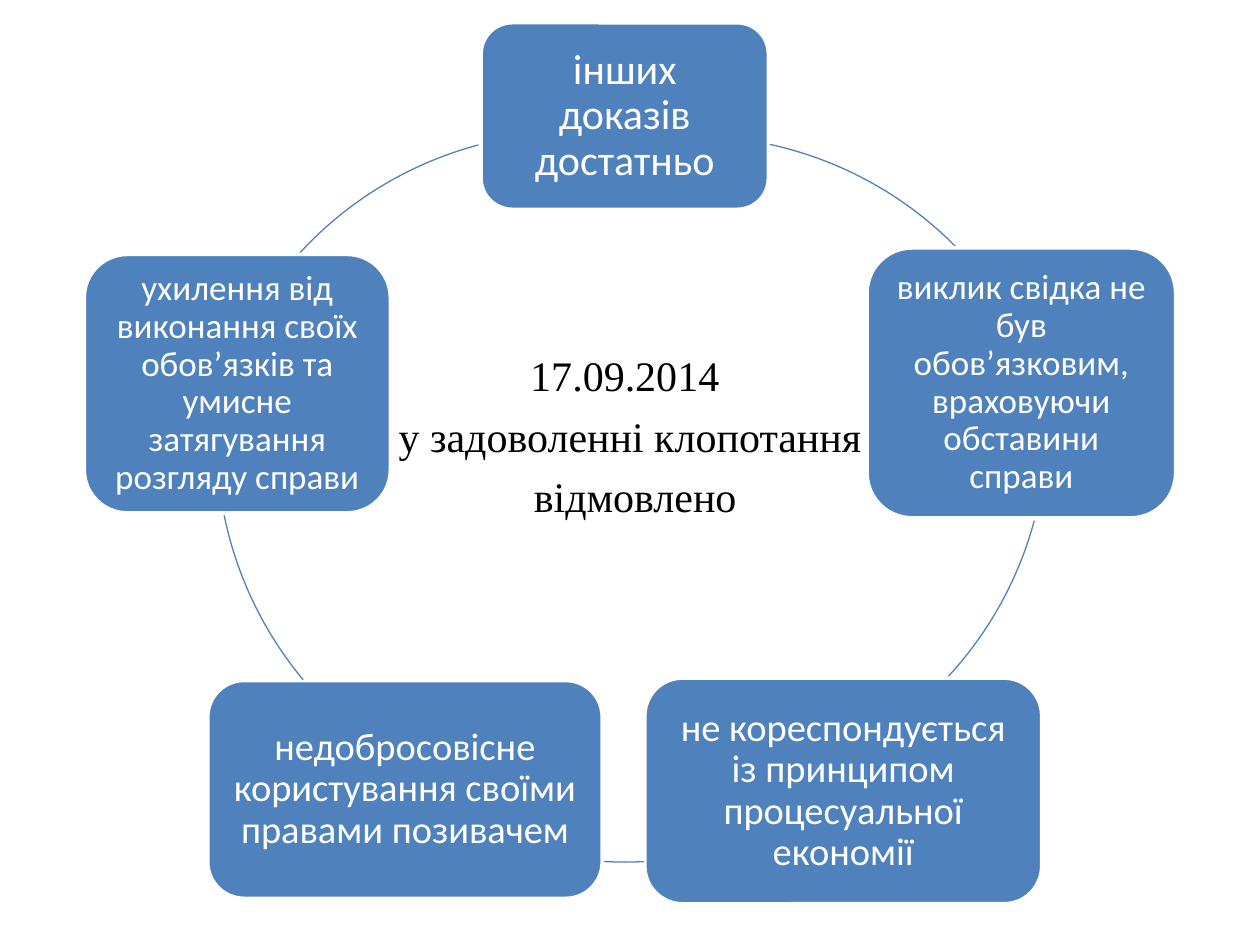
"""Builds a slide with a cycle of five reasons around a court decision."""
from dataclasses import dataclass

from lxml import etree
from pptx import Presentation
from pptx.dml.color import RGBColor
from pptx.enum.shapes import MSO_SHAPE
from pptx.enum.text import MSO_ANCHOR, MSO_AUTO_SIZE, PP_ALIGN
from pptx.oxml.ns import qn
from pptx.slide import Slide
from pptx.util import Cm, Pt

ROUNDED = MSO_SHAPE.ROUNDED_RECTANGLE
ARC = MSO_SHAPE.ARC
CENTER = PP_ALIGN.CENTER
TOP = MSO_ANCHOR.TOP
MIDDLE = MSO_ANCHOR.MIDDLE
NO_FIT = MSO_AUTO_SIZE.NONE


@dataclass(frozen=True)
class Theme:
    blue: RGBColor = RGBColor(0x4F, 0x81, 0xBD)
    white: RGBColor = RGBColor(0xFF, 0xFF, 0xFF)
    black: RGBColor = RGBColor(0, 0, 0)
    reason_font: str = "Calibri"
    decision_font: str = "Times New Roman"
    large: int = 24
    medium: int = 22
    small: int = 20
    decision_gap: float = 5.8
    border: float = 2
    arc_line: float = 0.75


@dataclass(frozen=True)
class Reason:
    wording: str
    size: int
    left: float
    top: float
    width: float
    height: float


@dataclass(frozen=True)
class Link:
    left: float
    top: float
    start: float
    end: float


THEME = Theme()
CIRCLE = 15.04
ADJUSTMENT_PER_DEGREE = 0.6
INSET_PER_POINT = 0.0104

DECISION = ("17.09.2014 ", "у задоволенні клопотання", " відмовлено")
REASONS = (
    Reason("інших доказів достатньо", THEME.large, 9.7, 0.46, 5.79, 3.76),
    Reason("виклик свідка не був обов’язковим, враховуючи обставини справи",
           THEME.small, 17.48, 5, 6.22, 5.44),
    Reason("не кореспондується із принципом процесуальної економії",
           THEME.medium, 13, 13.67, 8, 4.55),
    Reason("недобросовісне користування своїми правами позивачем",
           THEME.medium, 4.19, 13.72, 7.95, 4.39),
    Reason("ухилення від виконання своїх обов’язків та умисне затягування розгляду справи",
           THEME.small, 1.7, 5.13, 6.17, 5.21),
)
LINKS = (
    Link(6.4, 2.74, 282.3, 315.4),
    Link(6.07, 1.02, 15.1, 42.8),
    Link(5.08, 2.34, 87.1, 93.3),
    Link(4.37, 1.37, 140.2, 168.5),
    Link(4.06, 2.67, 222.7, 255.1),
)


def add_run(paragraph, wording: str, font: str, size: int, color: RGBColor) -> None:
    """Add one formatted run to a centred paragraph."""
    paragraph.alignment = CENTER
    run = paragraph.add_run()
    run.text = wording
    run.font.name = font
    run.font.size = Pt(size)
    run.font.color.rgb = color


def write_decision(slide: Slide) -> None:
    """Write the decision in the body placeholder."""
    body = slide.placeholders[1]
    body.left, body.top, body.width, body.height = Cm(1.27), Cm(4.45), Cm(22.86), Cm(12.57)
    frame = body.text_frame
    frame.auto_size = NO_FIT
    frame.vertical_anchor = TOP
    frame.margin_top = Cm(2.6)
    for index, wording in enumerate(DECISION):
        paragraph = frame.add_paragraph() if index else frame.paragraphs[0]
        properties = paragraph._p.get_or_add_pPr()
        properties.set("marL", "0")
        properties.set("indent", "0")
        etree.SubElement(properties, qn("a:buNone"))
        paragraph.space_before = Pt(THEME.decision_gap if index else 0)
        add_run(paragraph, wording, THEME.decision_font, THEME.large, THEME.black)


def draw_reason(slide: Slide, reason: Reason) -> None:
    """Draw one rounded box with its reason."""
    box = slide.shapes.add_shape(ROUNDED, Cm(reason.left), Cm(reason.top),
                                 Cm(reason.width), Cm(reason.height))
    box.shadow.inherit = False
    box.fill.solid()
    box.fill.fore_color.rgb = THEME.blue
    box.line.color.rgb = THEME.white
    box.line.width = Pt(THEME.border)
    frame = box.text_frame
    frame.word_wrap = True
    frame.vertical_anchor = MIDDLE
    inset = Cm(reason.size * INSET_PER_POINT)
    frame.margin_left = frame.margin_right = inset
    frame.margin_top = frame.margin_bottom = inset
    paragraph = frame.paragraphs[0]
    paragraph.line_spacing = 0.9
    add_run(paragraph, reason.wording, THEME.reason_font, reason.size, THEME.white)


def draw_link(slide: Slide, link: Link) -> None:
    """Draw the arc from one reason to the next."""
    arc = slide.shapes.add_shape(ARC, Cm(link.left), Cm(link.top), Cm(CIRCLE), Cm(CIRCLE))
    arc.shadow.inherit = False
    arc.adjustments[0] = link.start * ADJUSTMENT_PER_DEGREE
    arc.adjustments[1] = link.end * ADJUSTMENT_PER_DEGREE
    arc.fill.background()
    arc.line.color.rgb = THEME.blue
    arc.line.width = Pt(THEME.arc_line)


def main() -> None:
    """Build and save the presentation."""
    presentation = Presentation()
    presentation.slide_width, presentation.slide_height = Cm(25.4), Cm(19.05)
    slide = presentation.slides.add_slide(presentation.slide_layouts[1])
    empty_title = slide.shapes.title.element
    empty_title.getparent().remove(empty_title)
    write_decision(slide)
    for reason, link in zip(REASONS, LINKS):
        draw_reason(slide, reason)
        draw_link(slide, link)
    presentation.save("out.pptx")


if __name__ == "__main__":
    main()
